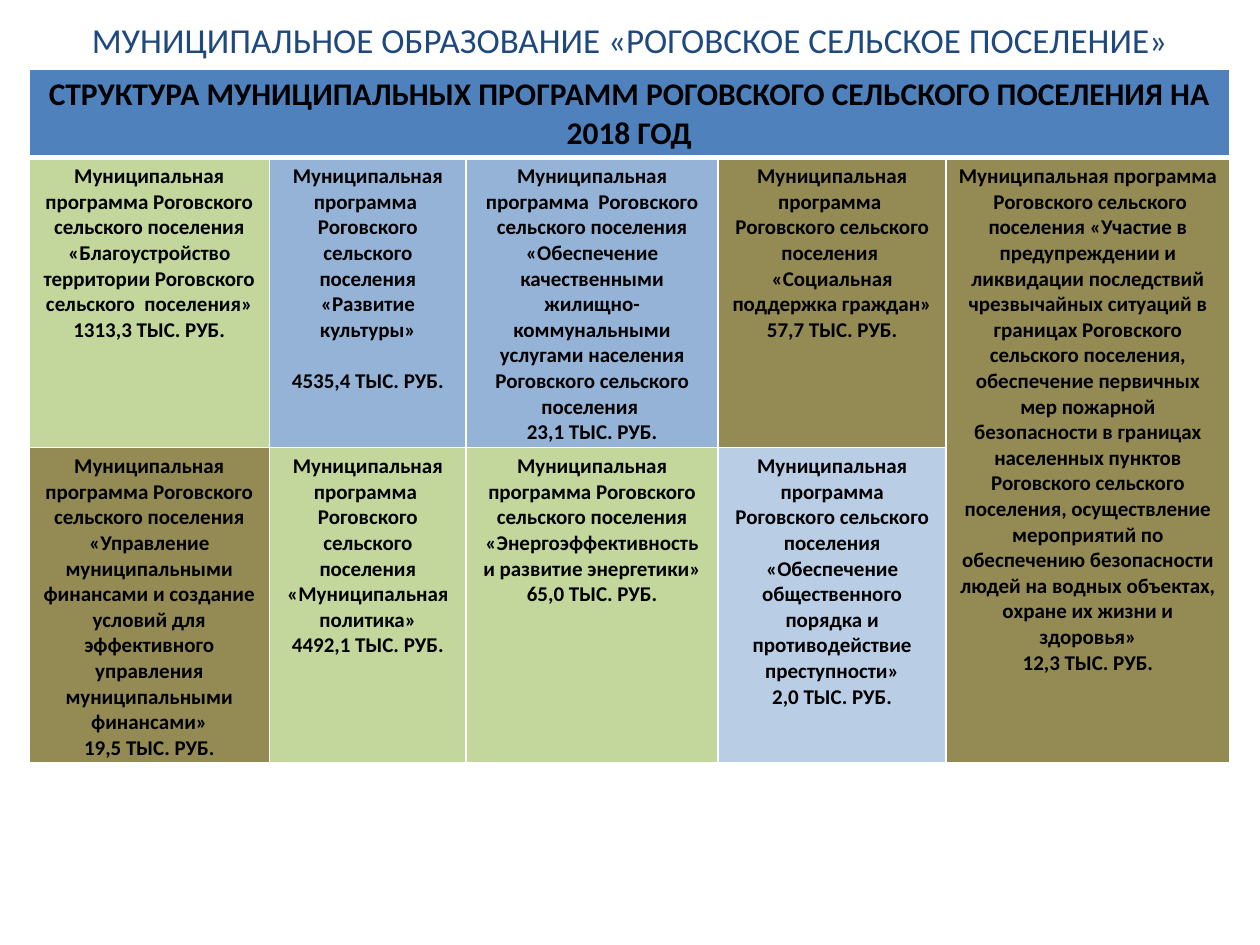
import dataclasses

import lxml.etree
import pptx
import pptx.dml.color
import pptx.enum.text
import pptx.oxml.ns
import pptx.util

Inches = pptx.util.Inches
Pt = pptx.util.Pt

GREEN, BLUE, PALE_BLUE, OLIVE = "C3D69B", "95B3D7", "B9CDE5", "948A54"
HEADER_BLUE, NAVY, BLACK, WHITE = "4F81BD", "1F497D", "000000", "FFFFFF"

COLUMN_WIDTHS = (1.91, 1.56, 2, 1.81, 2.25)
ROW_HEIGHTS = (0.7, 1.41, 2.37)
TABLE_HEIGHT = 5.5

HEADING = "МУНИЦИПАЛЬНОЕ ОБРАЗОВАНИЕ «РОГОВСКОЕ СЕЛЬСКОЕ ПОСЕЛЕНИЕ»"
TABLE_HEADER = "СТРУКТУРА МУНИЦИПАЛЬНЫХ ПРОГРАММ РОГОВСКОГО СЕЛЬСКОГО ПОСЕЛЕНИЯ НА 2018 ГОД"


@dataclasses.dataclass
class Program:
    row: int
    column: int
    fill: str
    name: str
    amount: str
    gap: float = 0  # points between name and amount


PROGRAMS = (
    Program(1, 0, GREEN, "Муниципальная программа Роговского сельского поселения "
            "«Благоустройство территории Роговского сельского  поселения»", "1313,3"),
    Program(1, 1, BLUE, "Муниципальная программа  Роговского сельского поселения "
            "«Развитие культуры»", "4535,4", gap=14.65),
    Program(1, 2, BLUE, "Муниципальная программа  Роговского сельского поселения "
            "«Обеспечение качественными жилищно-коммунальными услугами населения "
            "Роговского сельского поселения ", "23,1"),
    Program(1, 3, OLIVE, "Муниципальная программа  Роговского сельского поселения  "
            "«Социальная поддержка граждан»", "57,7"),
    Program(1, 4, OLIVE, "Муниципальная программа  Роговского сельского поселения "
            "«Участие в предупреждении и ликвидации последствий чрезвычайных ситуаций "
            "в границах Роговского сельского поселения, обеспечение первичных мер "
            "пожарной безопасности в границах населенных пунктов Роговского сельского "
            "поселения, осуществление мероприятий по обеспечению безопасности людей "
            "на водных объектах, охране их жизни и здоровья»", "12,3"),
    Program(2, 0, OLIVE, "Муниципальная программа Роговского сельского поселения "
            "«Управление муниципальными финансами и создание условий для эффективного "
            "управления муниципальными финансами»", "19,5"),
    Program(2, 1, GREEN, "Муниципальная программа  Роговского сельского поселения "
            "«Муниципальная политика»", "4492,1"),
    Program(2, 2, GREEN, "Муниципальная программа Роговского сельского поселения "
            "«Энергоэффективность и развитие энергетики»", "65,0"),
    Program(2, 3, PALE_BLUE, "Муниципальная программа Роговского сельского поселения "
            "«Обеспечение общественного порядка и противодействие преступности»", "2,0"),
)


def rgb(value: str) -> pptx.dml.color.RGBColor:
    return pptx.dml.color.RGBColor.from_string(value)


def write(paragraph, text: str, size: float, color: str = BLACK, bold: bool = True) -> None:
    paragraph.alignment = pptx.enum.text.PP_ALIGN.CENTER
    run = paragraph.add_run()
    run.text = text
    font_format = {"name": "Calibri", "size": Pt(size), "bold": bold}
    for attribute, value in font_format.items():
        setattr(run.font, attribute, value)
    run.font.color.rgb = rgb(color)


def set_borders(cell, bottom: float = 1) -> None:
    properties = cell._tc.get_or_add_tcPr()
    qn = pptx.oxml.ns.qn
    widths = {"lnL": 1, "lnR": 1, "lnT": 1, "lnB": bottom}
    for position, (side, width) in enumerate(widths.items()):
        line = lxml.etree.Element(qn(f"a:{side}"), w=str(Pt(width)))
        fill = lxml.etree.SubElement(line, qn("a:solidFill"))
        lxml.etree.SubElement(fill, qn("a:srgbClr"), val=WHITE)
        properties.insert(position, line)


def paint(cell, color: str) -> None:
    cell.fill.solid()
    cell.fill.fore_color.rgb = rgb(color)


def add_heading(slide) -> None:
    box = slide.shapes.add_textbox(Inches(0.5), Inches(0), Inches(9), Inches(0.62))
    frame_format = {
        "word_wrap": True,
        "vertical_anchor": pptx.enum.text.MSO_ANCHOR.MIDDLE,
    }
    for attribute, value in frame_format.items():
        setattr(box.text_frame, attribute, value)
    write(box.text_frame.paragraphs[0], HEADING, 20, NAVY, bold=False)


def fill_program(table, program: Program) -> None:
    cell = table.cell(program.row, program.column)
    paint(cell, program.fill)
    write(cell.text_frame.paragraphs[0], program.name, 12)
    amount = cell.text_frame.add_paragraph()
    amount.space_before = Pt(program.gap)
    write(amount, f"{program.amount} ТЫС. РУБ.", 12)


def add_programs_table(slide) -> None:
    frame = slide.shapes.add_table(
        len(ROW_HEIGHTS), len(COLUMN_WIDTHS), Inches(0.23), Inches(0.55),
        Inches(sum(COLUMN_WIDTHS)), Inches(TABLE_HEIGHT))
    table = frame.table
    table.horz_banding = False
    for column, width in zip(table.columns, COLUMN_WIDTHS):
        column.width = Inches(width)
    for row, height in zip(table.rows, ROW_HEIGHTS):
        row.height = Inches(height)
    frame.height = Inches(TABLE_HEIGHT)

    # Header row across all columns, last column across both program rows
    header = table.cell(0, 0)
    header.merge(table.cell(0, 4))
    table.cell(1, 4).merge(table.cell(2, 4))
    for cell in table.rows[0].cells:
        paint(cell, HEADER_BLUE)
    paint(table.cell(2, 4), OLIVE)
    write(header.text_frame.paragraphs[0], TABLE_HEADER, 18)

    for program in PROGRAMS:
        fill_program(table, program)

    # White grid, thicker under the header
    for index, row in enumerate(table.rows):
        for cell in row.cells:
            set_borders(cell, bottom=3 if index == 0 else 1)


def main() -> None:
    presentation = pptx.Presentation()
    presentation.slide_width = Inches(10)
    presentation.slide_height = Inches(7.5)
    slide = presentation.slides.add_slide(presentation.slide_layouts[6])
    add_heading(slide)
    add_programs_table(slide)
    presentation.save("out.pptx")


if __name__ == "__main__":
    main()
